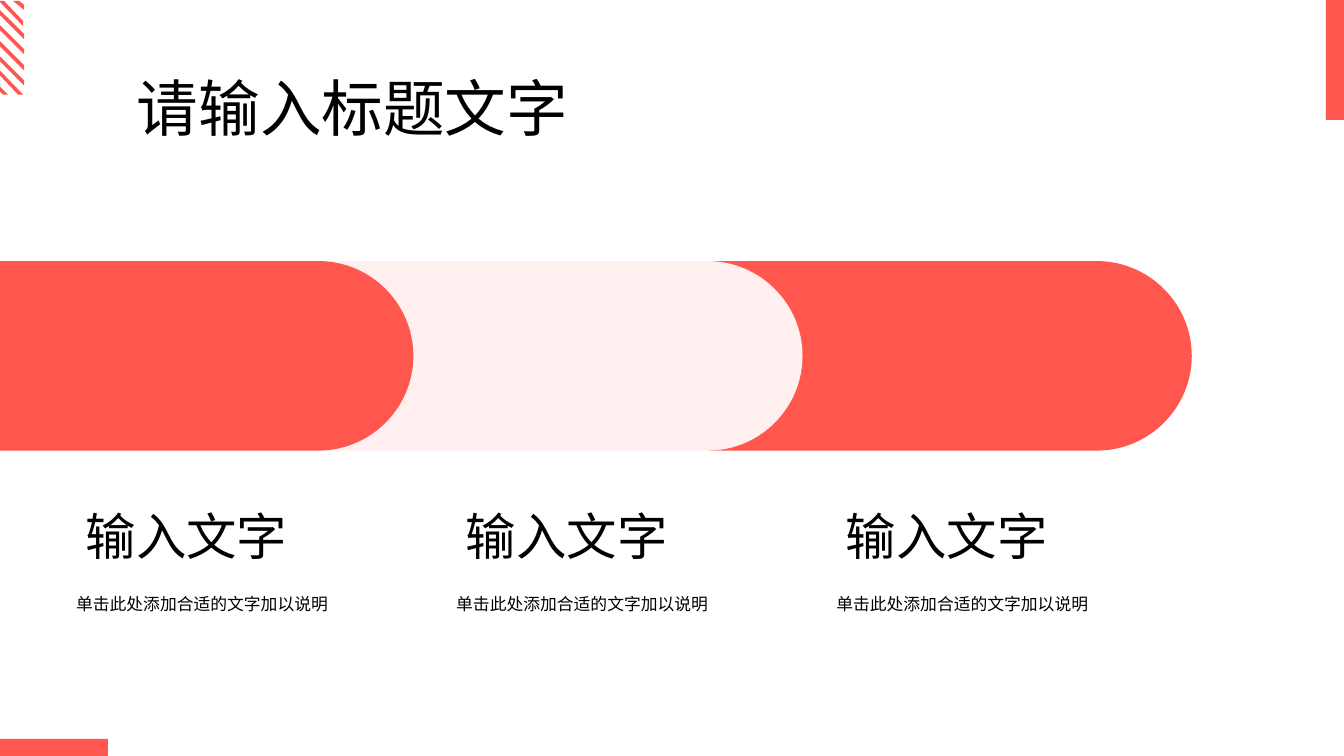
from lxml.etree import Element, SubElement
from pptx import Presentation
from pptx.dml.color import RGBColor
from pptx.enum.shapes import MSO_SHAPE
from pptx.enum.text import MSO_ANCHOR, PP_ALIGN
from pptx.oxml.ns import qn
from pptx.util import Inches, Pt

RED, PINK, BLACK = "FF574E", "FFF0EF", "000000"
CJK_FONT = "Noto Sans CJK JP"
BAND_TOP, BAND_HEIGHT = 2.59, 1.88
ARC_HANDLE = 0.55
COLUMN_STEP = 3.77


def color(value):
    """Turn a hex string into a colour."""
    return RGBColor.from_string(value)


def paint(sp, fill):
    """Give a shape a flat fill without line or shadow."""
    sp.shadow.inherit = False
    sp.fill.solid()
    sp.fill.fore_color.rgb = color(fill)
    sp.line.fill.background()


def add_block(s, x, y, w, h):
    """Add a red rectangle at the slide edge."""
    sp = s.shapes.add_shape(MSO_SHAPE.RECTANGLE, Inches(x), Inches(y), Inches(w), Inches(h))
    paint(sp, RED)


def add_outline(s, contours, fill):
    """Add one freeform made of closed contours given in inches."""
    contours = [[(Inches(x), Inches(y)) for x, y in points] for points in contours]
    builder = s.shapes.build_freeform(*contours[0][0], scale=1.0)
    for i, points in enumerate(contours):
        if i:
            builder.move_to(*points[0])
        builder.add_line_segments(points[1:], close=True)
    sp = builder.convert_to_shape()
    paint(sp, fill)
    return sp


def curve(line, handles):
    """Turn a straight segment into a cubic curve with two handles."""
    line.tag = qn("a:cubicBezTo")
    for i, (x, y) in enumerate(handles):
        pt = Element(qn("a:pt"), x=str(Inches(x)), y=str(Inches(y)))
        line.insert(i, pt)


def add_stripes(s):
    """Add the diagonal stripes in the top left corner."""
    left, right = -0.01, 0.24
    stripes = [
        [(left, 0.85), (0.08, 0.94), (0.03, 0.94), (left, 0.9)],
        [(left, 0.69), (0.23, 0.94), (0.18, 0.94), (left, 0.74)],
        [(0.13, 0.01), (0.19, 0.01), (right, 0.05), (right, 0.1)],
        [(left, 0.01), (0.04, 0.01), (0.23, 0.21), (0.23, 0.26)],
    ]
    for y in (0.55, 0.4, 0.24, 0.09):
        stripes.append([(left, y), (right, y + 0.25), (right, y + 0.3), (left, y + 0.05)])
    add_outline(s, stripes, RED)


def add_band(s, left, right, fill):
    """Add a band with a half-round right end."""
    radius = BAND_HEIGHT / 2
    handle = radius * ARC_HANDLE
    cx, middle, bottom = right - radius, BAND_TOP + radius, BAND_TOP + BAND_HEIGHT
    points = [(left, BAND_TOP), (cx, BAND_TOP), (right, middle), (cx, bottom), (left, bottom)]
    sp = add_outline(s, [points], fill)
    lines = list(sp._element.iter(qn("a:lnTo")))
    start, end = cx - left, right - left
    curve(lines[1], [(start + handle, 0), (end, radius - handle)])
    curve(lines[2], [(end, radius + handle), (start + handle, BAND_HEIGHT)])


def add_text(s, text, x, y, w, h, size, font=CJK_FONT, align=PP_ALIGN.CENTER):
    """Add a one-line text box."""
    tf = s.shapes.add_textbox(Inches(x), Inches(y), Inches(w), Inches(h)).text_frame
    tf.word_wrap = True
    tf.vertical_anchor = MSO_ANCHOR.MIDDLE
    tf.text = text
    p = tf.paragraphs[0]
    p.alignment = align
    r = p.runs[0]
    r.font.size = Pt(size)
    r.font.color.rgb = color(BLACK)
    r.font.name = font
    SubElement(r.font._element, qn("a:ea")).set("typeface", font)


def main():
    """Build the slide and save it."""
    prs = Presentation()
    prs.slide_width, prs.slide_height = Inches(13.33), Inches(7.5)
    s = prs.slides.add_slide(prs.slide_layouts[6])
    add_block(s, 0, 7.33, 1.07, 0.22)
    add_stripes(s)
    add_block(s, 13.15, 0, 0.19, 1.19)
    for left, right, fill in [(7.03, 11.82, RED), (3.16, 7.96, PINK), (0, 4.1, RED)]:
        add_band(s, left, right, fill)
    for i in range(3):
        offset = COLUMN_STEP * i
        add_text(s, "单击此处添加合适的文字加以说明", 0.57 + offset, 5.84, 2.87, 0.3, 12)
        add_text(s, "输入文字", 0.65 + offset, 4.96, 2.4, 0.71, 36)
    add_text(s, "请输入标题文字", 1.26, 0.64, 4.77, 0.84, 44, "Calibri", PP_ALIGN.LEFT)
    prs.save("out.pptx")


if __name__ == "__main__":
    main()
